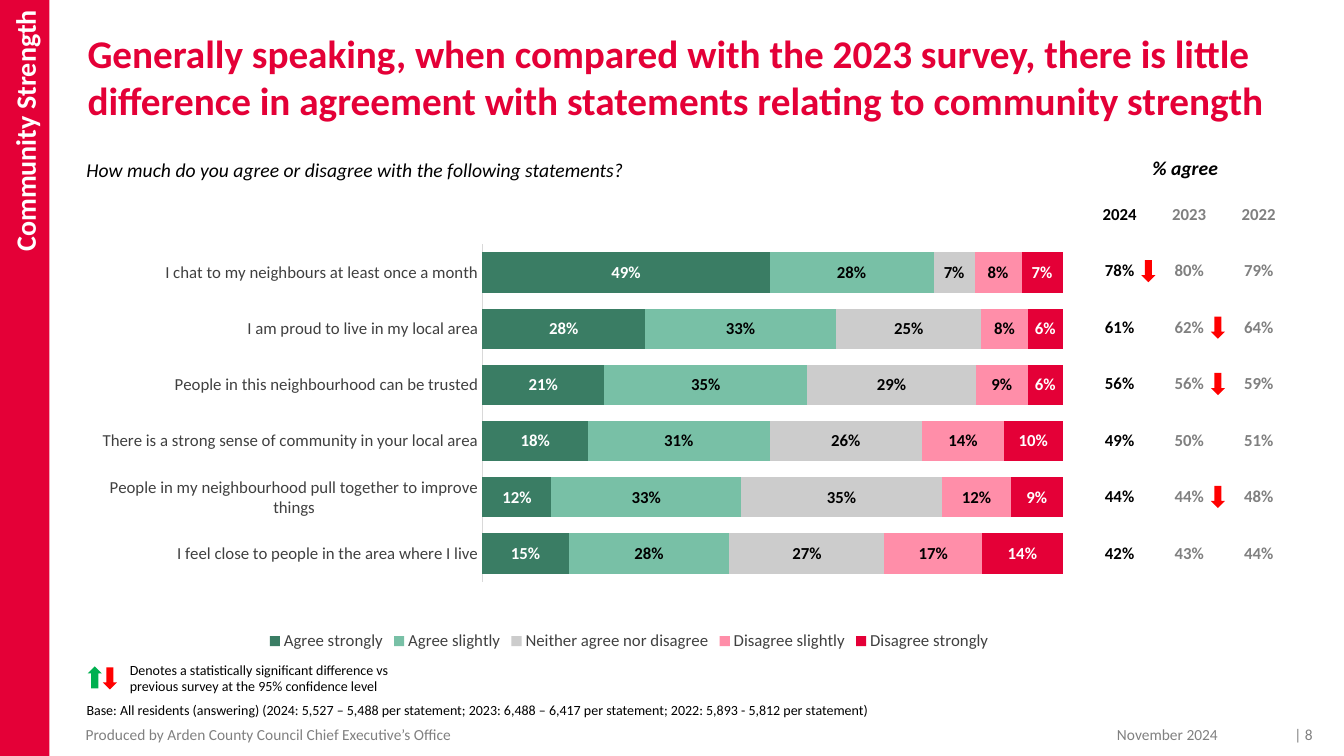
"""Build the community strength slide: agreement chart with yearly comparison table."""
from lxml import etree
from pptx import Presentation
from pptx.chart.data import CategoryChartData
from pptx.dml.color import RGBColor
from pptx.enum.chart import XL_CHART_TYPE, XL_LEGEND_POSITION, XL_TICK_MARK
from pptx.enum.shapes import MSO_SHAPE
from pptx.enum.text import MSO_ANCHOR, PP_ALIGN
from pptx.oxml.ns import qn
from pptx.util import Inches, Pt

LEFT, CENTER, RIGHT = PP_ALIGN.LEFT, PP_ALIGN.CENTER, PP_ALIGN.RIGHT
TOP, MIDDLE = MSO_ANCHOR.TOP, MSO_ANCHOR.MIDDLE
UP, DOWN = MSO_SHAPE.UP_ARROW, MSO_SHAPE.DOWN_ARROW
FONT = "Calibri"
COLORS = {
    "red": "E40037", "white": "FFFFFF", "black": "000000", "grey": "808080",
    "label": "404040", "axis": "D9D9D9", "rise": "00B050", "fall": "FF0000",
    "green": "3A7D64", "mint": "78C0A6", "silver": "CCCCCC", "pink": "FF8EA9",
}

SECTION = "Community Strength"
STATEMENTS = [
    "I chat to my neighbours at least once a month",
    "I am proud to live in my local area",
    "People in this neighbourhood can be trusted",
    "There is a strong sense of community in your local area",
    "People in my neighbourhood pull together to improve things",
    "I feel close to people in the area where I live",
]
ANSWERS = [
    ("Agree strongly", "green", "white", (0.49, 0.28, 0.21, 0.18, 0.12, 0.15)),
    ("Agree slightly", "mint", "black", (0.28, 0.33, 0.35, 0.31, 0.33, 0.28)),
    ("Neither agree nor disagree", "silver", "black", (0.07, 0.25, 0.29, 0.26, 0.35, 0.27)),
    ("Disagree slightly", "pink", "black", (0.08, 0.08, 0.09, 0.14, 0.12, 0.17)),
    ("Disagree strongly", "red", "white", (0.07, 0.06, 0.06, 0.1, 0.09, 0.14)),
]
AGREEMENT = [
    ("2024", "2023", "2022"),
    ("78%", "80%", "79%"),
    ("61%", "62%", "64%"),
    ("56%", "56%", "59%"),
    ("49%", "50%", "51%"),
    ("44%", "44%", "48%"),
    ("42%", "43%", "44%"),
]
SIGNIFICANT_FALLS = [(1, 1), (2, 2), (3, 2), (5, 2)]
INSETS = (0.1, 0.05, 0.1, 0.05)
FOOTER_TOP, FOOTER_HEIGHT = 7.21, 0.15
TEXTS = [
    ("Generally speaking, when compared with the 2023 survey, there is little difference "
     "in agreement with statements relating to community strength",
     (0.77, 0.24, 12.33, 1.18), 28, "red", True, False, LEFT, TOP, (0.1, 0.05, 0.1, 0)),
    ("How much do you agree or disagree with the following statements?",
     (0.76, 1.52, 9.5, 0.34), 14, "black", False, True, LEFT, TOP, INSETS),
    ("% agree", (10.95, 1.5, 1.61, 0.34), 14, "black", True, True, CENTER, TOP, INSETS),
    ("Denotes a statistically significant difference vs previous survey at the 95% "
     "confidence level",
     (1.19, 6.51, 3.04, 0.44), 10, "black", False, False, LEFT, TOP, INSETS),
    ("Base: All residents (answering) (2024: 5,527 – 5,488 per statement; "
     "2023: 6,488 – 6,417 per statement; 2022: 5,893 - 5,812 per statement)",
     (0.76, 6.91, 8.92, 0.27), 10, "black", False, False, LEFT, TOP, INSETS),
    ("Produced by Arden County Council Chief Executive’s Office",
     (0.76, FOOTER_TOP, 6.54, FOOTER_HEIGHT), 11, "grey", False, False, LEFT, MIDDLE,
     (0.09, 0.05, 0.1, 0.05)),
    ("November 2024", (9.68, FOOTER_TOP, 2.4, FOOTER_HEIGHT), 11, "grey", False, False,
     RIGHT, MIDDLE, (0.1, 0.05, 0, 0.05)),
    ("| 8", (12.17, FOOTER_TOP, 0.85, FOOTER_HEIGHT), 11, "grey", False, False,
     RIGHT, MIDDLE, (0.1, 0.05, 0, 0.05)),
]
CHART_BOX = (0.77, 2.42, 10.94, 4.08)
PLOT_SHARES = {"x": 0.367, "y": 0, "w": 0.526, "h": 0.821}
TABLE_LEFT, TABLE_TOP, COLUMN, ROW = 10.76, 1.85, 0.69, 0.56
ARROW_WIDTH, ARROW_HEIGHT = 0.14, 0.22


def rgb(color):
    return RGBColor.from_string(COLORS[color])


def box(lengths):
    return [Inches(length) for length in lengths]


def style(font, size, color, bold=False, italic=False):
    font.name, font.size, font.bold, font.italic = FONT, Pt(size), bold, italic
    font.color.rgb = rgb(color)


def write(frame, words, size, color, bold, italic, align, anchor, insets):
    frame.word_wrap = True
    frame.vertical_anchor = anchor
    (frame.margin_left, frame.margin_top,
     frame.margin_right, frame.margin_bottom) = box(insets)
    paragraph = frame.paragraphs[0]
    paragraph.text, paragraph.alignment = words, align
    style(paragraph.font, size, color, bold, italic)


def add_filled(slide, kind, lengths, color):
    shape = slide.shapes.add_shape(kind, *box(lengths))
    shape.shadow.inherit = False
    shape.fill.solid()
    shape.fill.fore_color.rgb = rgb(color)
    shape.line.fill.background()
    return shape


def add_arrow(slide, kind, center_x, center_y, color):
    add_filled(slide, kind, (center_x - ARROW_WIDTH / 2, center_y - ARROW_HEIGHT / 2,
                             ARROW_WIDTH, ARROW_HEIGHT), color)


def place_plot(chart):
    plot_area = chart._chartSpace.chart.plotArea
    for old in plot_area.findall(qn("c:layout")):
        plot_area.remove(old)
    layout = etree.Element(qn("c:layout"))
    manual = etree.SubElement(layout, qn("c:manualLayout"))
    settings = {"layoutTarget": "inner", "xMode": "edge", "yMode": "edge", **PLOT_SHARES}
    for tag, value in settings.items():
        etree.SubElement(manual, qn(f"c:{tag}")).set("val", str(value))
    plot_area.insert(0, layout)


def add_answers(slide):
    data = CategoryChartData(number_format="0%")
    data.categories = STATEMENTS
    for answer, _, _, shares in ANSWERS:
        data.add_series(answer, shares)
    chart = slide.shapes.add_chart(XL_CHART_TYPE.BAR_STACKED_100, *box(CHART_BOX), data).chart
    style(chart.font, 10, "black")
    chart.has_title = False
    chart.has_legend = True
    chart.legend.position = XL_LEGEND_POSITION.BOTTOM
    chart.legend.include_in_layout = False
    style(chart.legend.font, 12, "label")

    statements, shares_axis = chart.category_axis, chart.value_axis
    statements.reverse_order = True
    statements.major_tick_mark = XL_TICK_MARK.NONE
    statements.format.line.color.rgb = rgb("axis")
    statements.format.line.width = Pt(0.75)
    style(statements.tick_labels.font, 12, "label")
    shares_axis.minimum_scale, shares_axis.maximum_scale = 0, 1
    shares_axis.has_major_gridlines = False
    shares_axis.visible = False

    plot = chart.plots[0]
    plot.gap_width, plot.overlap, plot.vary_by_categories = 40, 100, False
    for series, (_, color, label_color, _) in zip(plot.series, ANSWERS):
        series.format.fill.solid()
        series.format.fill.fore_color.rgb = rgb(color)
        labels = series.data_labels
        labels.show_value = True
        labels.number_format, labels.number_format_is_linked = "0%", False
        style(labels.font, 12, label_color, True)
    place_plot(chart)


def add_agreement(slide):
    rows, columns = len(AGREEMENT), len(AGREEMENT[0])
    table = slide.shapes.add_table(rows, columns, *box(
        (TABLE_LEFT, TABLE_TOP, columns * COLUMN, rows * ROW))).table
    table.first_row = table.horz_banding = False
    for r, years in enumerate(AGREEMENT):
        for c, words in enumerate(years):
            cell = table.cell(r, c)
            cell.fill.background()
            cell.vertical_anchor = MIDDLE
            paragraph = cell.text_frame.paragraphs[0]
            paragraph.text, paragraph.alignment = words, CENTER
            style(paragraph.font, 12, "grey" if c else "black", True)


def main():
    deck = Presentation()
    deck.slide_width, deck.slide_height = box((13.33, 7.5))
    slide = deck.slides.add_slide(deck.slide_layouts[6])
    add_answers(slide)
    sidebar = add_filled(slide, MSO_SHAPE.RECTANGLE, (0, 0, 0.49, 7.5), "red")
    write(sidebar.text_frame, SECTION, 20, "white", True, False, RIGHT, MIDDLE,
          (0.1, 0.1, 0.1, 0.05))
    sidebar.text_frame._txBody.bodyPr.set("vert", "vert270")
    add_agreement(slide)
    for words, lengths, *look in TEXTS:
        write(slide.shapes.add_textbox(*box(lengths)).text_frame, words, *look)
    add_arrow(slide, UP, 0.94, 6.72, "rise")
    add_arrow(slide, DOWN, 1.09, 6.73, "fall")
    for row, column in SIGNIFICANT_FALLS:
        add_arrow(slide, DOWN, TABLE_LEFT + column * COLUMN - 0.06,
                  TABLE_TOP + (row + 0.5) * ROW, "fall")
    deck.save("out.pptx")


if __name__ == "__main__":
    main()
